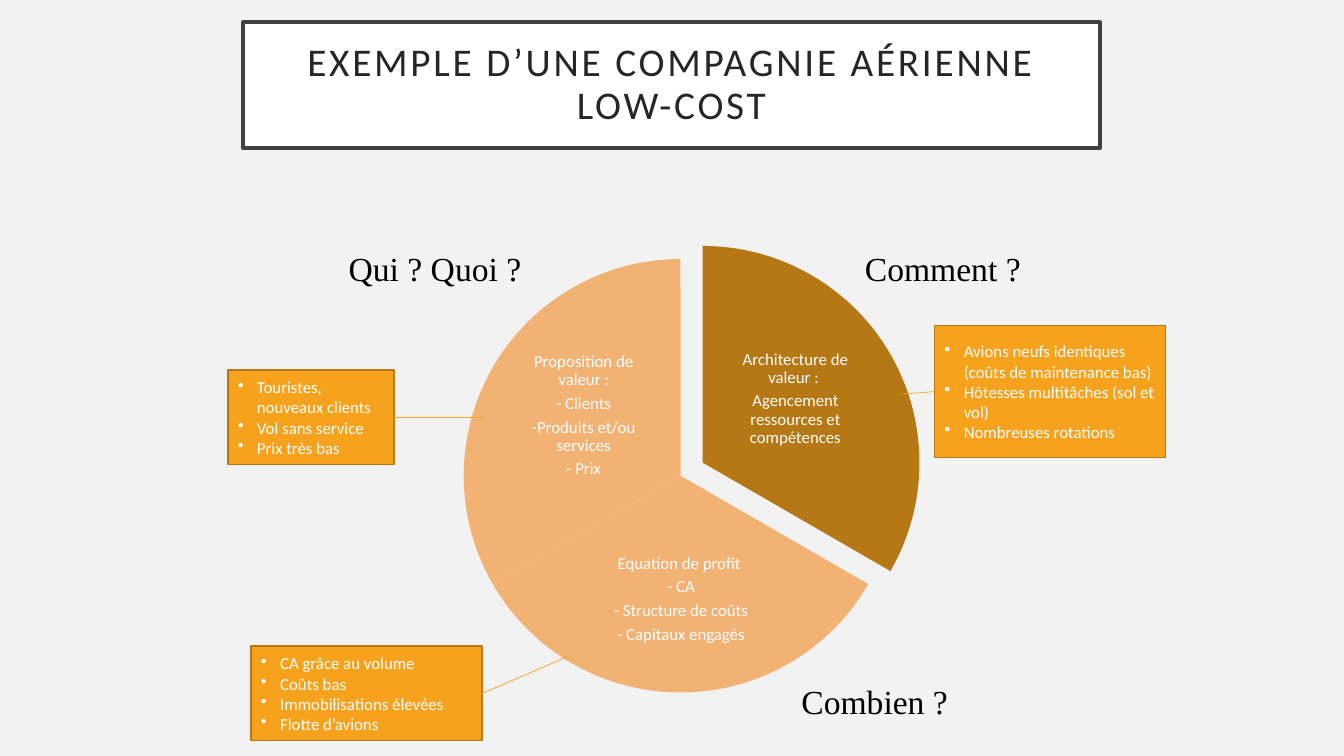
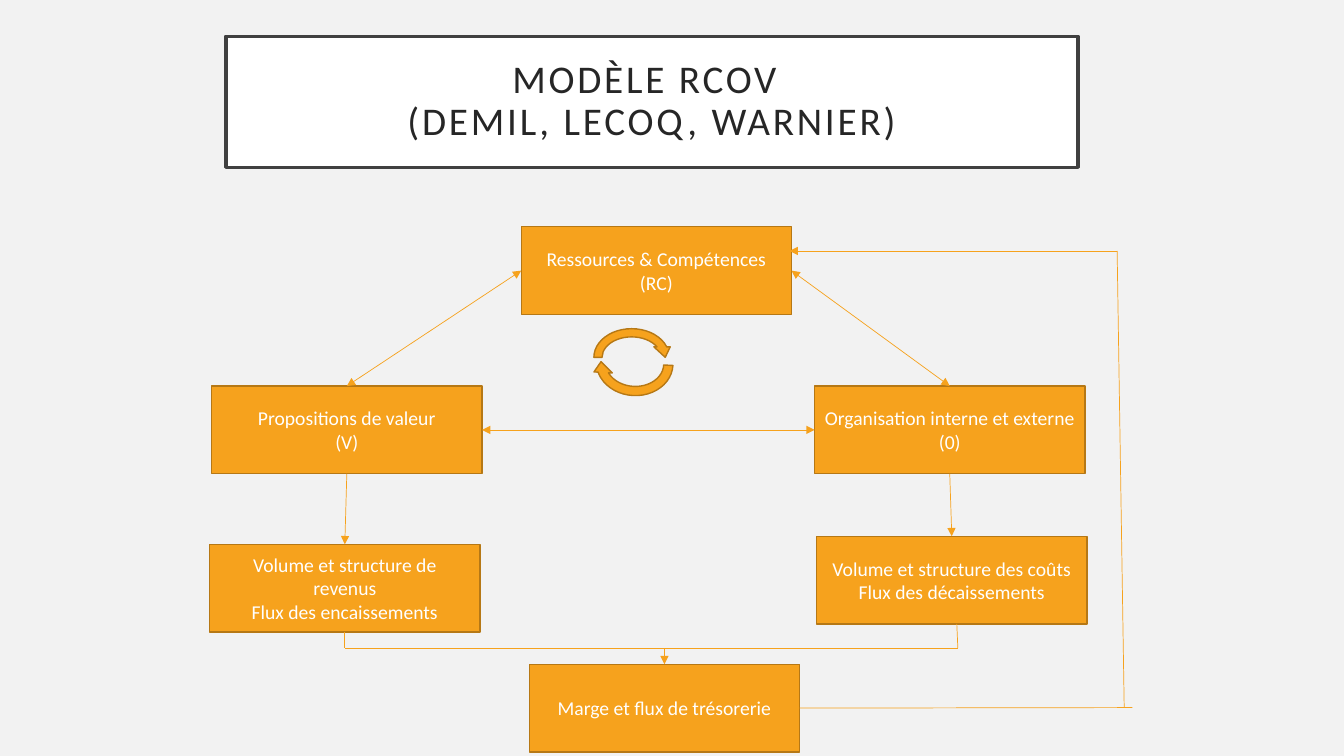
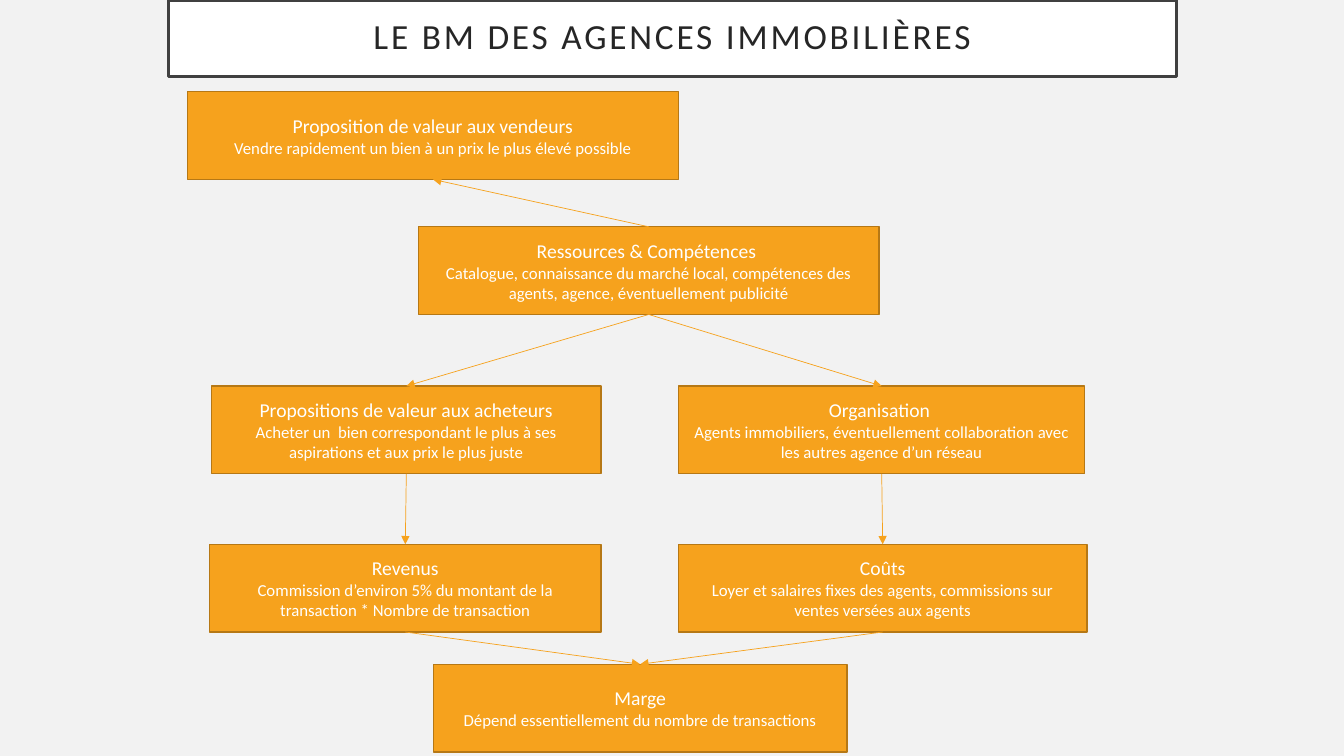
from lxml import etree
from pptx import Presentation
from pptx.dml.color import RGBColor
from pptx.enum.shapes import MSO_CONNECTOR, MSO_SHAPE
from pptx.enum.text import MSO_ANCHOR, MSO_AUTO_SIZE, PP_ALIGN
from pptx.oxml.ns import qn
from pptx.util import Inches, Pt

RECTANGLE, PIE, ARROW = MSO_SHAPE.RECTANGLE, MSO_SHAPE.PIE, MSO_SHAPE.CIRCULAR_ARROW
STRAIGHT = MSO_CONNECTOR.STRAIGHT
LEFT, CENTER = PP_ALIGN.LEFT, PP_ALIGN.CENTER
MIDDLE, TOP_ANCHOR = MSO_ANCHOR.MIDDLE, MSO_ANCHOR.TOP
NO_FIT = MSO_AUTO_SIZE.NONE

PAGE, WHITE, BLACK = "F2F2F2", "FFFFFF", "000000"
INK, FRAME = "262626", "404040"
ORANGE, BROWN, PEACH = "F6A21D", "B67815", "F2B274"
SANS, SERIF = "Calibri", "Times New Roman"

TOP, SIDE_LEFT, BOTTOM, SIDE_RIGHT = range(4)
BLOCK_HEIGHT = 0.87
HEADS = {"none": (), "end": ("a:tailEnd",), "both": ("a:headEnd", "a:tailEnd")}


def color(value):
    return RGBColor.from_string(value)


def inches(*lengths):
    return [Inches(length) for length in lengths]


def write(shape, paras, size=14, rest_size=None, font=SANS, ink=WHITE, align=CENTER,
          anchor=MIDDLE, inset=None, line_spacing=None, space_after=None,
          tracking=None, bullets=False):
    """Fill a shape with paragraphs; rest_size applies after the first one."""
    frame = shape.text_frame
    frame.word_wrap = True
    frame.auto_size = NO_FIT
    frame.vertical_anchor = anchor
    if inset is not None:
        frame.margin_left = frame.margin_right = Inches(inset)
        frame.margin_top = frame.margin_bottom = Inches(inset)
    for index, text in enumerate(paras):
        para = frame.add_paragraph() if index else frame.paragraphs[0]
        para.text = text
        para.alignment = align
        if line_spacing:
            para.line_spacing = line_spacing
        if space_after:
            para.space_after = Pt(space_after)
        if bullets:
            add_bullet(para)
        for span in para.runs:
            span.font.name = font
            span.font.size = Pt(rest_size if index and rest_size else size)
            span.font.color.rgb = color(ink)
            if tracking:
                span.font._element.set("spc", str(tracking * 100))


def add_bullet(para):
    properties = para._p.get_or_add_pPr()
    properties.set("marL", str(Inches(0.19)))
    properties.set("indent", str(Inches(-0.19)))
    etree.SubElement(properties, qn("a:buChar")).set("char", "•")


def paint(shape, fill, line=None, width=1):
    shape.fill.solid()
    shape.fill.fore_color.rgb = color(fill)
    if line:
        shape.line.color.rgb = color(line)
        shape.line.width = Pt(width)
    else:
        shape.line.fill.background()


def add_figure(slide, kind, box, fill=ORANGE, line=BROWN):
    shape = slide.shapes.add_shape(kind, *inches(*box))
    shape.shadow.inherit = False
    paint(shape, fill, line)
    return shape


def add_block(slide, box, paras, **text_format):
    block = add_figure(slide, RECTANGLE, box)
    write(block, paras, **text_format)
    return block


def add_label(slide, box, paras, **text_format):
    write(slide.shapes.add_textbox(*inches(*box)), paras, **text_format)


def add_link(slide, start, end, heads="none"):
    """Each end is a point (x, y) or a (shape, side) pair."""
    joined = [hasattr(target[0], "shape_id") for target in (start, end)]
    begin_point = (0, 0) if joined[0] else start
    end_point = (0, 0) if joined[1] else end
    link = slide.shapes.add_connector(STRAIGHT, *inches(*begin_point, *end_point))
    if joined[0]:
        link.begin_connect(*start)
    if joined[1]:
        link.end_connect(*end)
    link.line.color.rgb = color(ORANGE)
    link.line.width = Pt(0.5)
    properties = link._element.spPr
    for tag in HEADS[heads]:
        etree.SubElement(properties.find(qn("a:ln")), qn(tag)).set("type", "triangle")
    etree.SubElement(properties, qn("a:effectLst"))


def add_titled_slide(deck, title, box, size=28):
    slide = deck.slides.add_slide(deck.slide_layouts[5])
    shape = slide.shapes.title
    shape.left, shape.top, shape.width, shape.height = inches(*box)
    paint(shape, WHITE, FRAME, 2.5)
    write(shape, [title], size=size, ink=INK, inset=0.2, line_spacing=0.9, tracking=2)
    return slide


def add_value_pie(slide, left, top):
    diameter = 4.3
    slices = [
        (0.22, 0, 162, 18, BROWN, (2.56, 0.8, 1.46, 1.43),
         ["Architecture de valeur : ", "Agencement ressources et compétences"]),
        (0, 0.13, 18, 90, PEACH, (1.18, 2.84, 1.95, 1.33),
         ["Equation de profit ", "- CA", "- Structure de coûts", "- Capitaux engagés"]),
        (0, 0.13, 90, 162, PEACH, (0.46, 0.97, 1.46, 1.43),
         ["Proposition de valeur :", "- Clients", "-Produits et/ou services", "- Prix"]),
    ]
    for x, y, first, last, fill, (text_x, text_y, width, height), paras in slices:
        part = add_figure(slide, PIE, (left + x, top + y, diameter, diameter), fill, None)
        part.adjustments[0], part.adjustments[1] = first, last
        add_label(slide, (left + text_x, top + text_y, width, height), paras, size=12,
                  inset=0.02, line_spacing=0.9, space_after=4)


def add_cycle(slide, left, top):
    add_figure(slide, ARROW, (left, top, 0.83, 0.65))
    add_figure(slide, ARROW, (left + 0.02, top + 0.02, 0.85, 0.73)).rotation = 183.1


def add_flow(slide, left, top, blocks, links, **text_format):
    """Blocks are name: (x, y, width, paras); link ends are (name, side) or (x, y)."""
    shapes = {
        name: add_block(slide, (left + x, top + y, width, BLOCK_HEIGHT), paras, **text_format)
        for name, (x, y, width, paras) in blocks.items()
    }

    def locate(target):
        first, second = target
        return (shapes[first], second) if first in shapes else (left + first, top + second)

    for start, end, heads in links:
        add_link(slide, locate(start), locate(end), heads)


def build_airline(deck):
    slide = add_titled_slide(deck, "EXEMPLE D’UNE COMPAGNIE AÉRIENNE LOW-COST",
                             (2.41, 0.22, 8.5, 1.25))
    add_value_pie(slide, 4.6, 2.44)
    for x, y, question in [(3.36, 2.41, "Qui ? Quoi ?"), (8.48, 2.41, "Comment ?"),
                           (7.85, 6.71, "Combien ?")]:
        add_label(slide, (x, y, 2.13, 0.51), [question], size=24, font=SERIF, ink=BLACK,
                  align=LEFT, anchor=TOP_ANCHOR)
    notes = [
        ((2.26, 3.67, 1.65, 0.94), SIDE_RIGHT, (4.78, 4.14),
         ["Touristes, nouveaux clients", "Vol sans service", "Prix très bas"]),
        ((2.49, 6.41, 2.29, 0.94), SIDE_RIGHT, (5.64, 6.51),
         ["CA grâce au volume", "Coûts bas", "Immobilisations élevées", "Flotte d’avions"]),
        ((9.27, 3.23, 2.29, 1.31), SIDE_LEFT, (8.95, 3.91),
         ["Avions neufs identiques (coûts de maintenance bas)",
          "Hôtesses multitâches (sol et vol)", "Nombreuses rotations"]),
    ]
    for box, side, target, paras in notes:
        note = add_block(slide, box, paras, size=12, align=LEFT, bullets=True)
        add_link(slide, (note, side), target)


def build_rcov(deck):
    slide = add_titled_slide(deck, "MODÈLE RCOV \v(DEMIL, LECOQ, WARNIER)",
                             (2.24, 0.36, 8.45, 1.3))
    width = 2.68
    blocks = {
        "resources": (3.09, 0, width, ["Ressources & Compétences", "(RC)"]),
        "value": (0.02, 1.58, width, ["Propositions de valeur", "(V)"]),
        "organisation": (6, 1.58, width, ["Organisation interne et externe ", "(0)"]),
        "revenue": (0, 3.15, width,
                    ["Volume et structure de revenus", "Flux des encaissements"]),
        "costs": (6.02, 3.07, width,
                  ["Volume et structure des coûts", "Flux des décaissements"]),
        "margin": (3.17, 4.34, width, ["Marge et flux de trésorerie"]),
    }
    links = [
        (("value", SIDE_RIGHT), ("organisation", SIDE_LEFT), "both"),
        (("resources", SIDE_RIGHT), ("organisation", TOP), "both"),
        (("resources", SIDE_LEFT), ("value", TOP), "both"),
        (("margin", SIDE_RIGHT), (9.15, 4.77), "none"),
        ((9.07, 4.77), (9, 0.24), "none"),
        ((9, 0.24), (5.75, 0.24), "end"),
        (("organisation", BOTTOM), ("costs", TOP), "end"),
        (("value", BOTTOM), ("revenue", TOP), "end"),
        (("revenue", BOTTOM), (1.34, 4.18), "none"),
        ((1.34, 4.18), (7.42, 4.18), "none"),
        ((7.42, 4.18), (7.41, 3.94), "none"),
        ((4.51, 4.18), ("margin", TOP), "end"),
    ]
    add_flow(slide, 2.08, 2.25, blocks, links)
    add_cycle(slide, 5.85, 3.22)


def build_agencies(deck):
    slide = add_titled_slide(deck, "LE BM DES AGENCES IMMOBILIÈRES",
                             (1.67, 0, 10, 0.76), size=25.2)
    blocks = {
        "sellers": (0, 0, 4.87, [
            "Proposition de valeur aux vendeurs",
            "Vendre rapidement un bien à un prix le plus élevé possible"]),
        "resources": (2.29, 1.34, 4.57, [
            "Ressources & Compétences ",
            "Catalogue, connaissance du marché local, compétences des agents, agence, "
            "éventuellement publicité"]),
        "buyers": (0.24, 2.92, 3.86, [
            "Propositions de valeur aux acheteurs",
            "Acheter un  bien correspondant le plus à ses aspirations et aux prix "
            "le plus juste"]),
        "organisation": (4.87, 2.92, 4.03, [
            "Organisation ",
            "Agents immobiliers, éventuellement collaboration avec les autres agence "
            "d’un réseau"]),
        "revenue": (0.22, 4.49, 3.88, [
            "Revenus",
            "Commission d’environ 5% du montant de la transaction * Nombre de transaction"]),
        "costs": (4.87, 4.49, 4.05, [
            "Coûts",
            "Loyer et salaires fixes des agents, commissions sur ventes versées aux agents"]),
        "margin": (2.44, 5.68, 4.1, [
            "Marge", "Dépend essentiellement du nombre de transactions"]),
    }
    links = [
        ((source, BOTTOM), (target, TOP), "end")
        for source, target in [("organisation", "costs"), ("buyers", "revenue"),
                               ("revenue", "margin"), ("costs", "margin"),
                               ("resources", "buyers"), ("resources", "organisation")]
    ]
    links.append((("resources", TOP), ("sellers", BOTTOM), "end"))
    add_flow(slide, 1.86, 0.91, blocks, links, rest_size=12)


def main():
    deck = Presentation()
    deck.slide_width, deck.slide_height = inches(13.33, 7.5)
    background = deck.slide_master.background.fill
    background.solid()
    background.fore_color.rgb = color(PAGE)
    build_airline(deck)
    build_rcov(deck)
    build_agencies(deck)
    deck.save("out.pptx")


if __name__ == "__main__":
    main()
